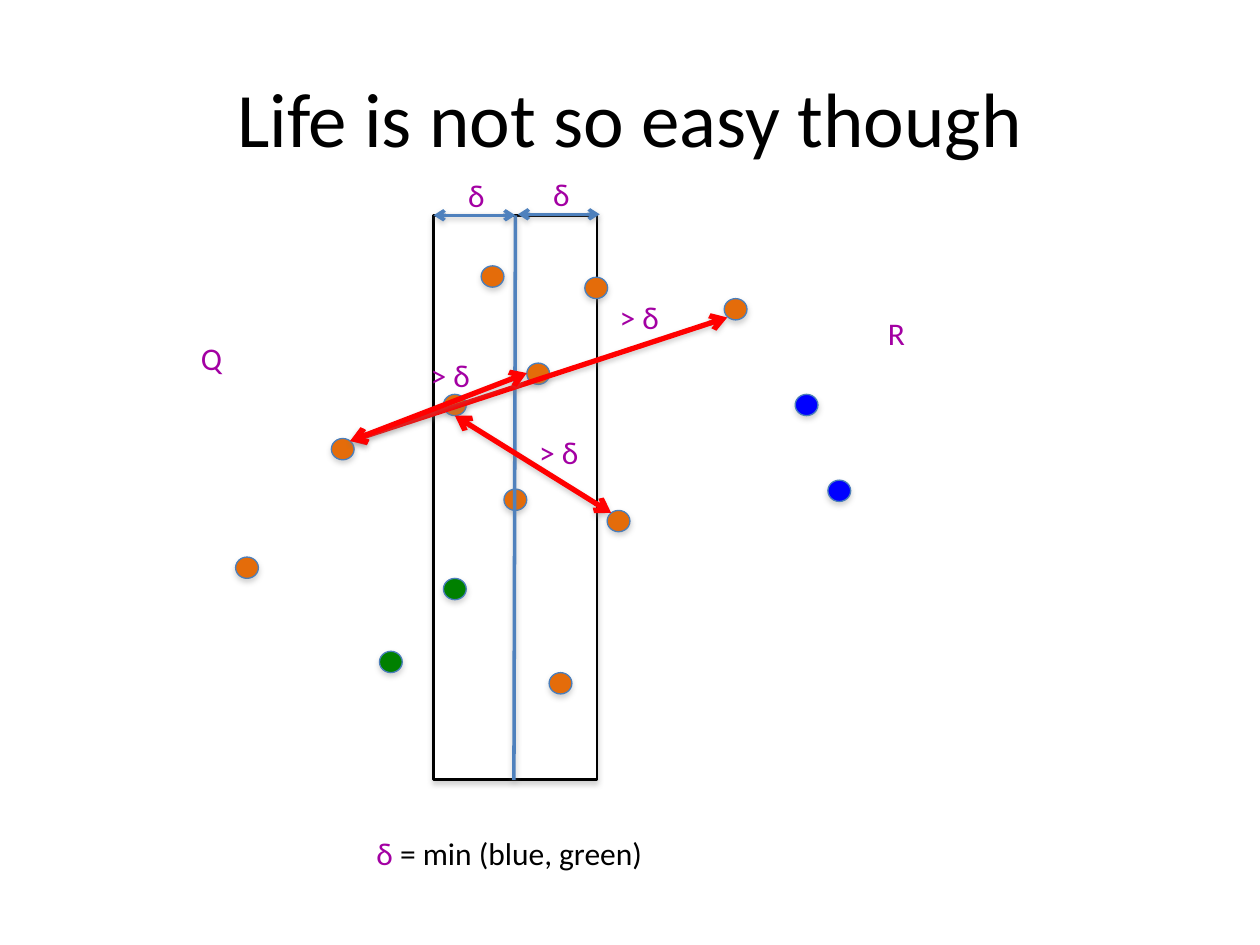
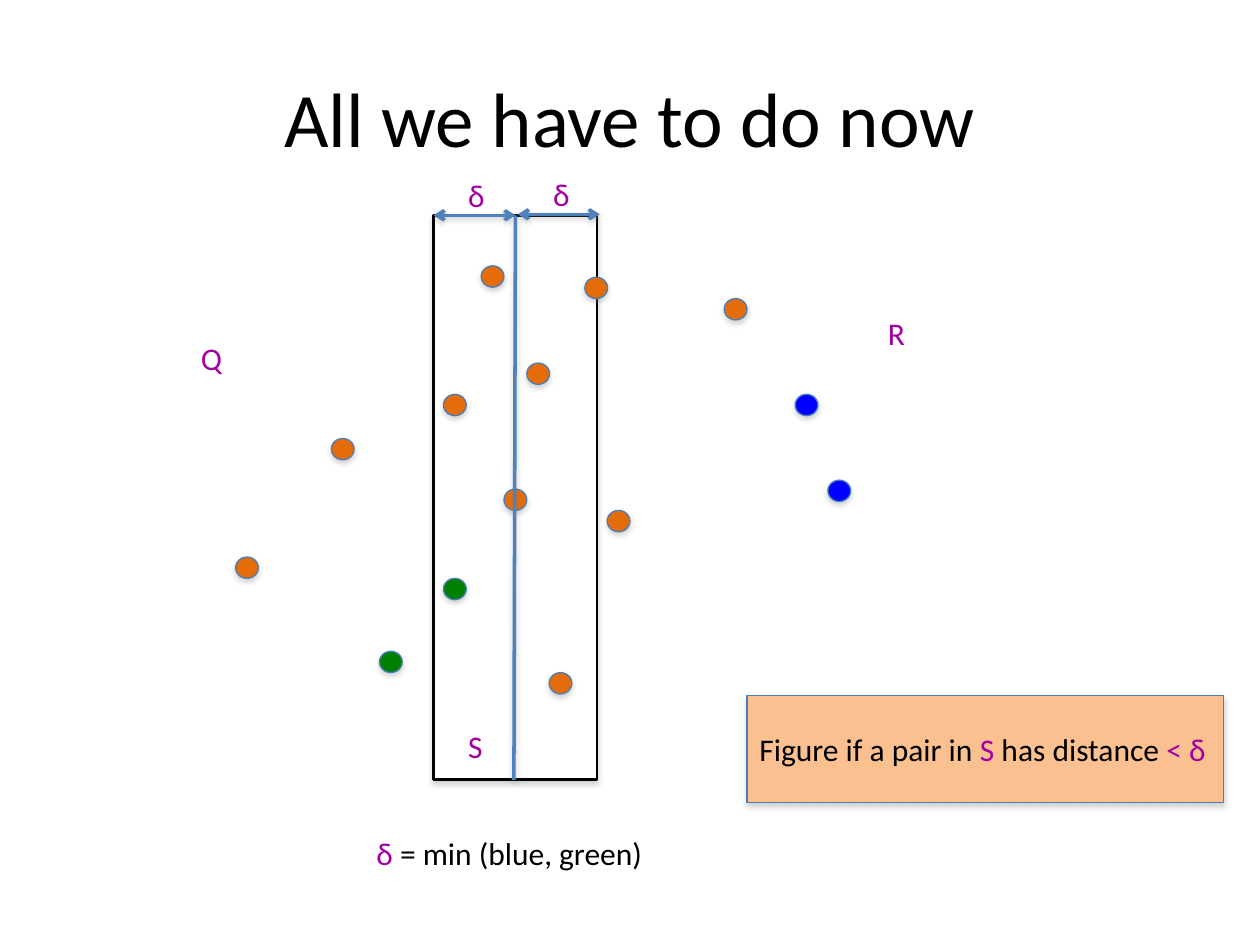
from collections import namedtuple

from lxml import etree
from pptx import Presentation
from pptx.dml.color import RGBColor
from pptx.enum.shapes import MSO_CONNECTOR, MSO_SHAPE
from pptx.enum.text import MSO_ANCHOR, MSO_AUTO_SIZE, PP_ALIGN
from pptx.oxml.ns import qn
from pptx.util import Cm, Pt

STRAIGHT = MSO_CONNECTOR.STRAIGHT
RECTANGLE, OVAL = MSO_SHAPE.RECTANGLE, MSO_SHAPE.OVAL
MIDDLE = MSO_ANCHOR.MIDDLE
FIT_SHAPE = MSO_AUTO_SIZE.SHAPE_TO_FIT_TEXT
LEFT, CENTER = PP_ALIGN.LEFT, PP_ALIGN.CENTER

Box = namedtuple("Box", "left top width height")

FONT = "Calibri"
BLACK, WHITE, PURPLE = "000000", "FFFFFF", "A300A3"
ORANGE, GREEN, BLUE, RED = "E46C0A", "008000", "0000FF", "FF0000"
OUTLINE, RULE, PEACH = "4A7EBB", "4F81BD", "FAC090"
SHADOW = "808080"

TITLE = Box(1.27, 0.76, 22.86, 3.18)
DIAGRAM = Box(3.8, 3.4, 14.9, 14.3)
CALLOUT = Box(15.06, 14.02, 9.6, 2.16)

DOT_WIDTH, DOT_HEIGHT = 0.46, 0.43
LABEL_HEIGHT = 1.02
STRIP = Box(4.94, 0.94, 3.3, 11.38)
HALF_STRIP = STRIP.width / 2

DOTS = {
    ORANGE: [(5.9, 1.96), (2.88, 5.44), (10.8, 2.62), (6.82, 3.92), (5.14, 4.55),
             (0.95, 7.83), (6.36, 6.46), (7.99, 2.19), (8.44, 6.89), (7.27, 10.16)],
    GREEN: [(5.14, 8.26), (3.85, 9.73)],
    BLUE: [(12.23, 4.55), (12.89, 6.28)],
}
LABELS = [
    ("Q", 0, 3.3, 0.94),
    ("R", 13.85, 2.8, 0.86),
    ("δ", 5.39, 0.03, 0.84),
    ("δ", 7.1, 0, 0.84),
]
DISTANCES = [
    ((3.26, 5.49), (10.86, 3), (8.44, 2.49)),
    ((5.37, 4.98), (8.52, 6.94), (6.82, 5.21)),
    ((3.26, 5.49), (6.82, 4.12), (4.63, 3.66)),
]


def color(value):
    return RGBColor.from_string(value)


def inside(box, left, top, width=0, height=0):
    return Box(box.left + left, box.top + top, width, height)


def add_shadow(properties, opacity, distance):
    effects = properties.find(qn("a:effectLst"))
    if effects is None:
        effects = etree.SubElement(properties, qn("a:effectLst"))
    shadow = etree.SubElement(effects, qn("a:outerShdw"), blurRad=str(Pt(3.1)),
                              dist=str(Pt(distance)), dir="5400000", rotWithShape="0")
    tint = etree.SubElement(shadow, qn("a:srgbClr"), val=SHADOW)
    etree.SubElement(tint, qn("a:alpha"), val=str(opacity * 1000))


def add_filled(page, kind, box, fill, outline=OUTLINE, weight=0.75):
    shape = page.shapes.add_shape(kind, *map(Cm, box))
    shape.fill.solid()
    shape.fill.fore_color.rgb = color(fill)
    shape.line.color.rgb = color(outline)
    shape.line.width = Pt(weight)
    shape.shadow.inherit = False
    add_shadow(shape.element.spPr, 35, 1.8)
    return shape


def add_line(page, box, start, end, stroke, weight, arrows=True):
    begin, finish = inside(box, *start), inside(box, *end)
    line = page.shapes.add_connector(STRAIGHT, Cm(begin.left), Cm(begin.top),
                                     Cm(finish.left), Cm(finish.top))
    line.line.color.rgb = color(stroke)
    line.line.width = Pt(weight)
    if arrows:
        outline = line.line._get_or_add_ln()
        for tag in ("a:headEnd", "a:tailEnd"):
            etree.SubElement(outline, qn(tag), type="arrow")
    add_shadow(line._element.spPr, 38, 1.6)


def write_spans(para, spans, size=18):
    for text, shade in spans:
        span = para.add_run()
        span.text = text
        span.font.name = FONT
        span.font.size = Pt(size)
        span.font.color.rgb = color(shade)


def add_label(page, box, spans):
    label = page.shapes.add_textbox(*map(Cm, box))
    label.text_frame.word_wrap = False
    label.text_frame.auto_size = FIT_SHAPE
    write_spans(label.text_frame.paragraphs[0], spans)


def add_title(page, box, text):
    title = page.shapes.title
    title.left, title.top, title.width, title.height = map(Cm, box)
    title.text_frame.vertical_anchor = MIDDLE
    para = title.text_frame.paragraphs[0]
    para.alignment = CENTER
    write_spans(para, [(text, BLACK)], size=44)


def add_diagram(page, box):
    add_filled(page, RECTANGLE, inside(box, *STRIP), WHITE, BLACK, 1.5)
    for fill, places in DOTS.items():
        for left, top in places:
            add_filled(page, OVAL, inside(box, left, top, DOT_WIDTH, DOT_HEIGHT), fill)
    add_label(page, inside(box, 3.54, 13.29, 5.92, LABEL_HEIGHT),
              [("δ", PURPLE), (" = min (blue, green)", BLACK)])
    middle = STRIP.left + HALF_STRIP
    add_line(page, box, (middle, STRIP.top), (middle - 0.03, STRIP.top + STRIP.height),
             RULE, 2, arrows=False)
    for left, top in ((STRIP.left, STRIP.top), (middle + 0.05, STRIP.top - 0.02)):
        add_line(page, box, (left, top), (left + HALF_STRIP, top), RULE, 2)
    for text, left, top, width in LABELS:
        add_label(page, inside(box, left, top, width, LABEL_HEIGHT), [(text, PURPLE)])


def add_distances(page, box):
    for start, end, place in DISTANCES:
        add_label(page, inside(box, *place, 1.32, LABEL_HEIGHT), [("> δ", PURPLE)])
        add_line(page, box, start, end, RED, 3)


def add_callout(page, box):
    callout = add_filled(page, RECTANGLE, box, PEACH)
    callout.text_frame.word_wrap = True
    callout.text_frame.vertical_anchor = MIDDLE
    para = callout.text_frame.paragraphs[0]
    para.alignment = LEFT
    write_spans(para, [("Figure if a pair in ", BLACK), ("S", PURPLE),
                       (" has distance ", BLACK), ("< δ", PURPLE)])


def add_page(deck, title):
    page = deck.slides.add_slide(deck.slide_layouts[5])
    add_title(page, TITLE, title)
    add_diagram(page, DIAGRAM)
    return page


def main():
    deck = Presentation()
    deck.slide_width, deck.slide_height = Cm(25.4), Cm(19.05)
    page = add_page(deck, "Life is not so easy though")
    add_distances(page, DIAGRAM)
    page = add_page(deck, "All we have to do now")
    add_label(page, inside(DIAGRAM, 5.39, 11.13, 0.81, LABEL_HEIGHT), [("S", PURPLE)])
    add_callout(page, CALLOUT)
    deck.save("out.pptx")


if __name__ == "__main__":
    main()
